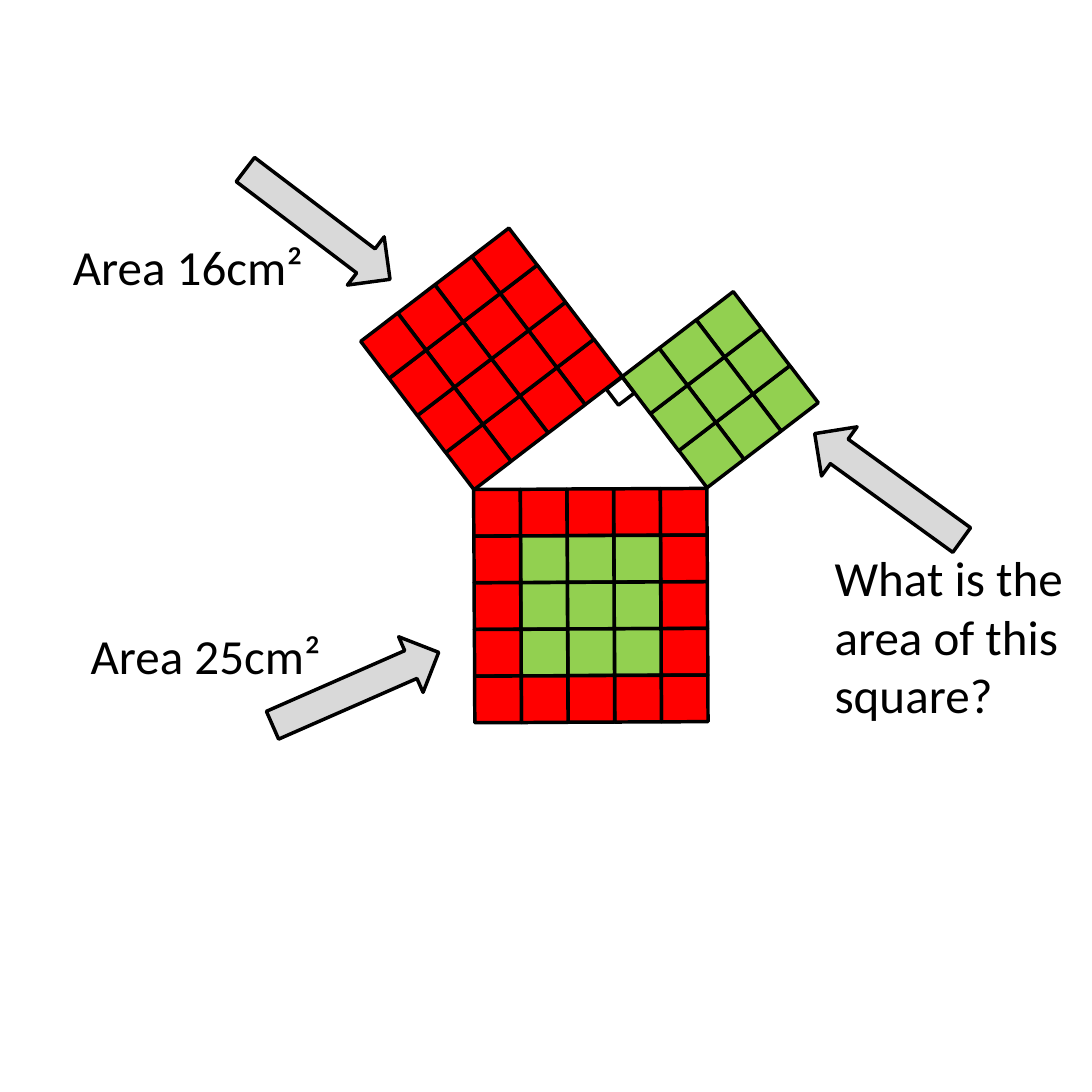
"""Build a slide showing Pythagoras' theorem with squares cut into unit cells."""
from dataclasses import dataclass
from math import cos, radians, sin

from pptx import Presentation
from pptx.dml.color import RGBColor
from pptx.enum.shapes import MSO_SHAPE
from pptx.enum.text import MSO_AUTO_SIZE
from pptx.util import Inches, Pt


@dataclass(frozen=True)
class Theme:
    red: str = "FF0000"
    green: str = "92D050"
    grey: str = "D9D9D9"
    black: str = "000000"
    font: str = "Calibri"
    size: float = 14
    line: float = 1


THEME = Theme()
SIDE = 4.33
CELLS = 23.4
TILT, LEVEL = 142.6, 89.7

# Centre, cells per side, turn, edge colour, inner colour
SQUARES = [
    ((15.43, 8.35), 3, TILT, THEME.green, THEME.green),
    ((10.53, 7.69), 4, TILT, THEME.red, THEME.red),
    ((12.66, 12.98), 5, LEVEL, THEME.red, THEME.green),
]
CORNER = ((13.29, 8.38), 0.43)
ARROW = (3.89, 1.3)

# Text, left and top, width and height, wrap, arrow centre, arrow turn
LABELS = [
    ("Area 16cm²", (1.03, 4.81), (6.05, 1.84), False, (6.81, 4.81), 37.2),
    ("Area 25cm²", (1.41, 13.13), (6.05, 1.84), False, (7.62, 14.76), 336.3),
    ("What is the area of this square?", (17.35, 11.46), (6.7, 4.38), True,
     (19.03, 10.43), 215.9),
]


def cells(count):
    return Inches(count * SIDE / CELLS)


def add_form(shapes, kind, centre, size, turn, fill=None):
    (x, y), (wide, high) = centre, size
    form = shapes.add_shape(kind, cells(x - wide / 2), cells(y - high / 2),
                            cells(wide), cells(high))
    form.rotation = turn
    form.shadow.inherit = False
    if fill:
        form.fill.solid()
        form.fill.fore_color.rgb = RGBColor.from_string(fill)
    else:
        form.fill.background()
    form.line.color.rgb = RGBColor.from_string(THEME.black)
    form.line.width = Pt(THEME.line)


def add_square(shapes, centre, count, turn, edge, inner):
    angle = radians(turn)
    ends = (0, count - 1)
    for row in range(count):
        for col in range(count):
            across, down = col - ends[1] / 2, row - ends[1] / 2
            spot = (centre[0] + across * cos(angle) - down * sin(angle),
                    centre[1] + across * sin(angle) + down * cos(angle))
            fill = edge if row in ends or col in ends else inner
            add_form(shapes, MSO_SHAPE.RECTANGLE, spot, (1, 1), turn, fill)


def add_label(shapes, text, place, size, wrap):
    frame = shapes.add_textbox(*map(cells, place + size)).text_frame
    frame.word_wrap = wrap
    frame.auto_size = MSO_AUTO_SIZE.SHAPE_TO_FIT_TEXT
    frame.text = text
    font = frame.paragraphs[0].font
    font.name = THEME.font
    font.size = Pt(THEME.size)
    font.color.rgb = RGBColor.from_string(THEME.black)


def main():
    deck = Presentation()
    deck.slide_width = deck.slide_height = Inches(SIDE)
    shapes = deck.slides.add_slide(deck.slide_layouts[6]).shapes
    figure = shapes.add_group_shape().shapes
    for square in SQUARES:
        add_square(figure, *square)
    spot, side = CORNER
    add_form(figure, MSO_SHAPE.RECTANGLE, spot, (side, side), TILT)
    for text, place, size, wrap, centre, turn in LABELS:
        add_label(shapes, text, place, size, wrap)
        add_form(shapes, MSO_SHAPE.RIGHT_ARROW, centre, ARROW, turn, THEME.grey)
    deck.save("out.pptx")


if __name__ == "__main__":
    main()
